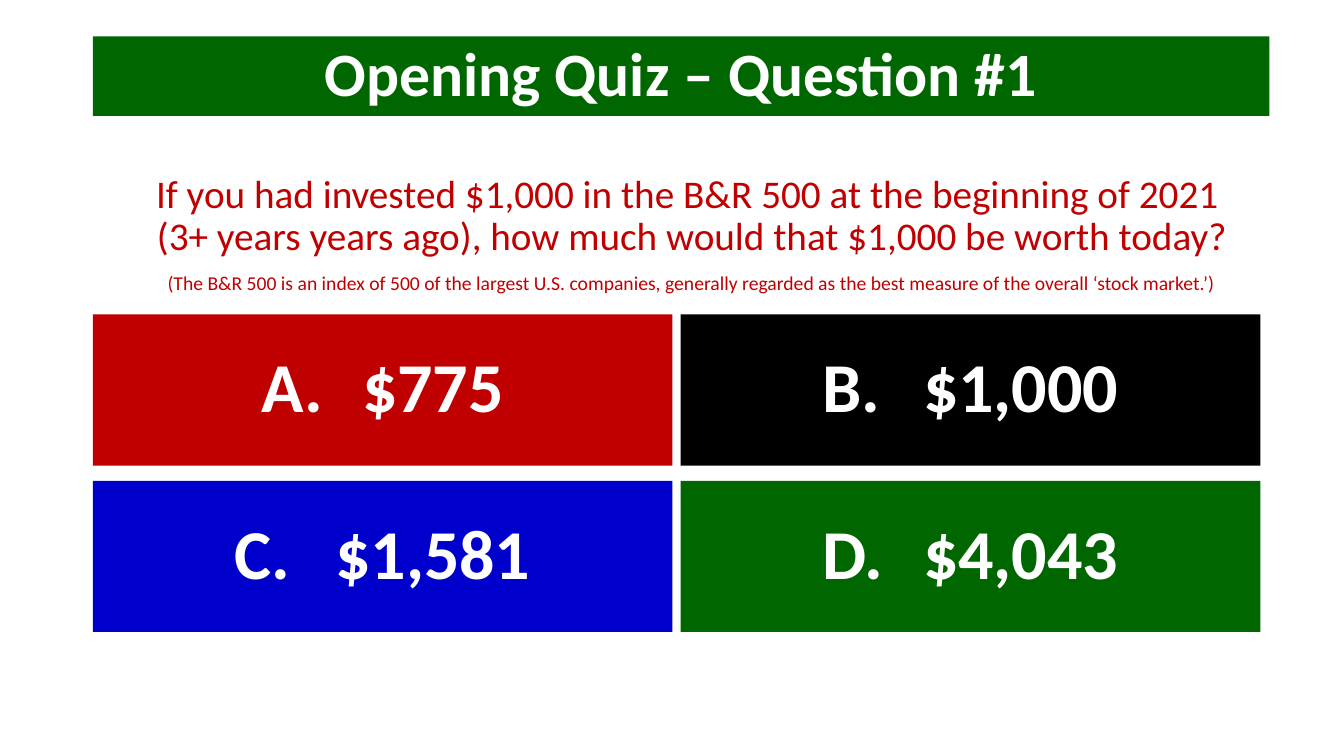
"""Build the opening quiz slide with one question and four answers."""
import copy
from dataclasses import dataclass

import pptx
import pptx.dml.color
import pptx.enum.shapes
import pptx.enum.text
import pptx.oxml
import pptx.oxml.ns
import pptx.util
from pptx.util import Inches

TITLE = "Opening Quiz – Question #1"
QUESTION = (
    "If you had invested $1,000 in the B&R 500 at the beginning of 2021 \n"
    "(3+ years years ago), how much would that $1,000 be worth today?"
)
NOTE = (
    "(The B&R 500 is an index of 500 of the largest U.S. companies, generally "
    "regarded as the best measure of the overall ‘stock market.’)"
)


@dataclass(frozen=True)
class Theme:
    """Font, colours and type sizes of the slide."""

    font: str = "Calibri"
    white: str = "FFFFFF"
    black: str = "000000"
    red: str = "C00000"
    blue: str = "0000CC"
    green: str = "006600"
    title_size: int = 44
    question_size: int = 28
    note_size: int = 14
    answer_size: int = 50


THEME = Theme()
ANSWERS = [
    ("A.", "$775", THEME.red),
    ("B.", "$1,000", THEME.black),
    ("C.", "$1,581", THEME.blue),
    ("D.", "$4,043", THEME.green),
]

LEFT = 0.92
ANSWERS_TOP = 3.12
ANSWER_WIDTH, ANSWER_HEIGHT = 5.75, 1.5
COLUMN_GAP, ROW_GAP = 0.08, 0.15
COLUMNS = 2


def place(part, left, top, width, height):
    """Move and size a part, given inches."""
    part.left, part.top = Inches(left), Inches(top)
    part.width, part.height = Inches(width), Inches(height)


def fill(part, color):
    """Give a part a plain fill and no outline."""
    part.fill.solid()
    part.fill.fore_color.rgb = pptx.dml.color.RGBColor.from_string(color)
    part.line.fill.background()


def prepare(frame, anchor):
    """Set wrapping, fitting and vertical anchor of a text frame."""
    frame.word_wrap = True
    frame.auto_size = pptx.enum.text.MSO_AUTO_SIZE.NONE
    frame.vertical_anchor = anchor


def write(paragraph, text, *, size, color, bold=False, before=0, tab=None):
    """Write centred text into a paragraph with its format."""
    paragraph.text = text
    paragraph.alignment = pptx.enum.text.PP_ALIGN.CENTER
    paragraph.line_spacing = 0.9
    paragraph.space_before = pptx.util.Pt(before)
    properties = paragraph._p.get_or_add_pPr()
    properties.set("marL", "0")
    properties.set("indent", "0")
    namespace = pptx.oxml.ns.nsdecls("a")
    properties.append(pptx.oxml.parse_xml(f"<a:buNone {namespace}/>"))
    if tab:
        properties.append(pptx.oxml.parse_xml(
            f'<a:tabLst {namespace}><a:tab pos="{Inches(tab)}" algn="l"/></a:tabLst>'
        ))
    for run in paragraph.runs:
        run.font.name = THEME.font
        run.font.size = pptx.util.Pt(size)
        run.font.bold = bold
        run.font.color.rgb = pptx.dml.color.RGBColor.from_string(color)
    for line_break in paragraph._p.findall(pptx.oxml.ns.qn("a:br")):
        line_break.append(copy.deepcopy(paragraph.runs[0]._r.rPr))


def add_answer(slide, index, letter, amount, color):
    """Add one answer box at its place in the grid."""
    row, column = divmod(index, COLUMNS)
    answer = slide.shapes.add_shape(
        pptx.enum.shapes.MSO_SHAPE.RECTANGLE,
        Inches(LEFT + column * (ANSWER_WIDTH + COLUMN_GAP)),
        Inches(ANSWERS_TOP + row * (ANSWER_HEIGHT + ROW_GAP)),
        Inches(ANSWER_WIDTH),
        Inches(ANSWER_HEIGHT),
    )
    answer.shadow.inherit = False
    fill(answer, color)
    prepare(answer.text_frame, pptx.enum.text.MSO_ANCHOR.MIDDLE)
    write(answer.text_frame.paragraphs[0], f"{letter}\t{amount}",
          size=THEME.answer_size, color=THEME.white, bold=True, tab=1)


def main():
    """Build and save the slide."""
    deck = pptx.Presentation()
    deck.slide_width, deck.slide_height = Inches(13.33), Inches(7.5)
    slide = deck.slides.add_slide(deck.slide_layouts[1])

    title = slide.shapes.title
    place(title, LEFT, 0.36, 11.67, 0.79)
    fill(title, THEME.green)
    prepare(title.text_frame, pptx.enum.text.MSO_ANCHOR.MIDDLE)
    write(title.text_frame.paragraphs[0], TITLE,
          size=THEME.title_size, color=THEME.white, bold=True)

    question = slide.placeholders[1]
    place(question, LEFT, 1.68, 11.88, 1.4)
    prepare(question.text_frame, pptx.enum.text.MSO_ANCHOR.TOP)
    write(question.text_frame.paragraphs[0], QUESTION,
          size=THEME.question_size, color=THEME.red)
    write(question.text_frame.add_paragraph(), NOTE,
          size=THEME.note_size, color=THEME.red, before=10)

    for index, (letter, amount, color) in enumerate(ANSWERS):
        add_answer(slide, index, letter, amount, color)

    deck.save("out.pptx")


if __name__ == "__main__":
    main()
